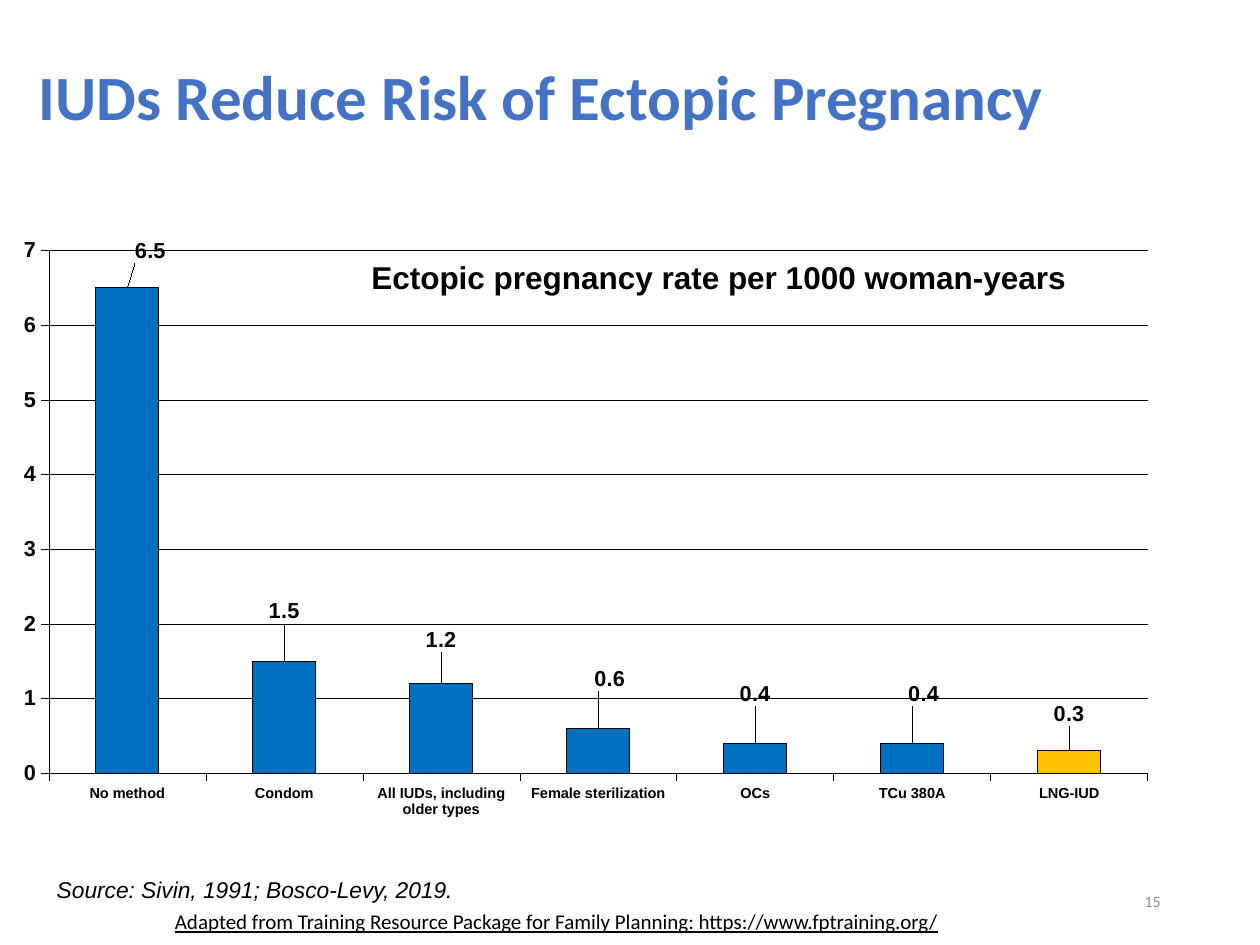
from dataclasses import dataclass

from lxml.etree import SubElement
from pptx import Presentation
from pptx.chart.data import CategoryChartData
from pptx.dml.color import RGBColor
from pptx.enum.chart import XL_CHART_TYPE as ChartType
from pptx.enum.chart import XL_LABEL_POSITION as LabelPosition
from pptx.enum.chart import XL_TICK_LABEL_POSITION as TickLabel
from pptx.enum.chart import XL_TICK_MARK as TickMark
from pptx.enum.text import MSO_ANCHOR as Anchor
from pptx.enum.text import MSO_AUTO_SIZE as AutoSize
from pptx.enum.text import PP_ALIGN as Align
from pptx.oxml import parse_xml
from pptx.oxml.ns import nsdecls, qn
from pptx.util import Inches, Pt

COLORS = {
    "title": "4472C4",
    "text": "000000",
    "muted": "8C8C8C",
    "bar": "0070C0",
    "highlight": "FFC000",
}


@dataclass(frozen=True)
class TextBlock:
    text: str
    box: tuple[float, float, float, float]
    size: float
    font: str = "Calibri"
    color: str = "text"
    bold: bool = False
    italic: bool = False
    underline: bool = False
    align: Align = Align.LEFT
    anchor: Anchor = Anchor.TOP
    wrap: bool = True
    grow: bool = False
    line_spacing: float = 1.0


@dataclass(frozen=True)
class Method:
    name: str
    rate: float
    label_shift: tuple[float, float]
    color: str = "bar"


METHODS = [
    Method("No method", 6.5, (0.02, -0.03)),
    Method("Condom", 1.5, (0, -0.05)),
    Method("All IUDs, including older types", 1.2, (0, -0.04)),
    Method("Female sterilization", 0.6, (0.01, -0.05)),
    Method("OCs", 0.4, (0, -0.05)),
    Method("TCu 380A", 0.4, (0.01, -0.05)),
    Method("LNG-IUD", 0.3, (0, -0.03), "highlight"),
]

TITLE = TextBlock(
    "IUDs Reduce Risk of Ectopic Pregnancy", (0.21, 0.17, 9, 1.25), 36,
    color="title", bold=True, anchor=Anchor.MIDDLE, line_spacing=0.9,
)
CAPTIONS = [
    TextBlock(
        "Ectopic pregnancy rate per 1000 woman-years", (2.58, 2, 6.25, 0.4), 18,
        font="Arial", bold=True, align=Align.CENTER, grow=True,
    ),
    TextBlock(
        "Source: Sivin, 1991; Bosco-Levy, 2019.", (0.32, 6.9, 3.4, 0.32), 13,
        font="Arial", italic=True, align=Align.CENTER, wrap=False, grow=True,
    ),
    TextBlock(
        "15", (7.06, 6.95, 2.25, 0.4), 9,
        color="muted", align=Align.RIGHT, anchor=Anchor.MIDDLE,
    ),
    TextBlock(
        "Adapted from Training Resource Package for Family Planning: "
        "https://www.fptraining.org/",
        (1.29, 7.16, 6.94, 0.27), 12, underline=True,
    ),
]


def rgb(name: str) -> RGBColor:
    """Return the named colour."""
    return RGBColor.from_string(COLORS[name])


def add_text(slide, block: TextBlock) -> None:
    """Add one text block to the slide."""
    shape = slide.shapes.add_textbox(*map(Inches, block.box))
    frame = shape.text_frame
    frame.word_wrap = block.wrap
    frame.auto_size = AutoSize.SHAPE_TO_FIT_TEXT if block.grow else AutoSize.NONE
    frame.vertical_anchor = block.anchor
    paragraph = frame.paragraphs[0]
    paragraph.alignment = block.align
    paragraph.line_spacing = block.line_spacing
    run = paragraph.add_run()
    run.text = block.text
    style_font(run.font, block.size, block.font, block.color, block.bold)
    run.font.italic = block.italic
    run.font.underline = block.underline


def style_font(font, size: float, name="Arial", color="text", bold=True) -> None:
    """Set the size, typeface, colour and weight of a font."""
    font.size = Pt(size)
    font.name = name
    font.bold = bold
    font.color.rgb = rgb(color)


def style_line(line, width: float) -> None:
    """Give a line the text colour and a width in points."""
    line.color.rgb = rgb("text")
    line.width = Pt(width)


def make_layout(**values: float | str):
    """Build a manual chart layout from its settings in schema order."""
    layout = parse_xml(f"<c:layout {nsdecls('c')}><c:manualLayout/></c:layout>")
    for tag, value in values.items():
        SubElement(layout[0], qn(f"c:{tag}")).set("val", str(value))
    return layout


def style_axis(axis, size: float) -> None:
    """Style the line, ticks and labels of an axis."""
    axis.major_tick_mark = TickMark.OUTSIDE
    axis.minor_tick_mark = TickMark.NONE
    style_line(axis.format.line, 0.17)
    style_font(axis.tick_labels.font, size)


def add_rate_chart(slide, methods: list[Method]) -> None:
    """Add the column chart of ectopic pregnancy rates."""
    data = CategoryChartData()
    data.categories = [method.name for method in methods]
    data.add_series("Series 1", [method.rate for method in methods])
    box = map(Inches, (0, 1.77, 9.22, 5.09))
    chart = slide.shapes.add_chart(ChartType.COLUMN_CLUSTERED, *box, data).chart
    chart.has_legend = False
    chart.has_title = False
    style_font(chart.font, 12.4)

    style_axis(chart.category_axis, 8.3)
    chart.category_axis.tick_label_position = TickLabel.LOW
    value_axis = chart.value_axis
    style_axis(value_axis, 12.4)
    value_axis.minimum_scale = 0
    value_axis.maximum_scale = 7
    value_axis.major_unit = 1
    value_axis.has_major_gridlines = True
    style_line(value_axis.major_gridlines.format.line, 0.17)

    plot = chart.plots[0]
    plot.gap_width = 150
    plot.vary_by_categories = False
    series = plot.series[0]
    series.format.fill.solid()
    series.format.fill.fore_color.rgb = rgb("title")
    style_line(series.format.line, 0.69)
    series.data_labels.show_value = True
    series.data_labels.position = LabelPosition.OUTSIDE_END
    style_font(series.data_labels.font, 12.4)

    for index, method in enumerate(methods):
        point = series.points[index]
        point.format.fill.solid()
        point.format.fill.fore_color.rgb = rgb(method.color)
        style_line(point.format.line, 0.69)
        point.data_label.position = LabelPosition.OUTSIDE_END
        style_font(point.data_label.font, 12.4)
    for label, method in zip(chart.element.iter(qn("c:dLbl")), methods):
        left, top = method.label_shift
        label.insert(1, make_layout(x=left, y=top))

    plot_area = next(chart.element.iter(qn("c:plotArea")))
    for old_layout in plot_area.findall(qn("c:layout")):
        plot_area.remove(old_layout)
    plot_area.insert(0, make_layout(
        layoutTarget="inner", xMode="edge", yMode="edge",
        x=0.042, y=0.043, w=0.946, h=0.815,
    ))


def main() -> None:
    """Build and save the slide."""
    presentation = Presentation()
    presentation.slide_width = Inches(10)
    presentation.slide_height = Inches(7.5)
    slide = presentation.slides.add_slide(presentation.slide_layouts[6])
    add_text(slide, TITLE)
    add_rate_chart(slide, METHODS)
    for caption in CAPTIONS:
        add_text(slide, caption)
    presentation.save("out.pptx")


if __name__ == "__main__":
    main()
